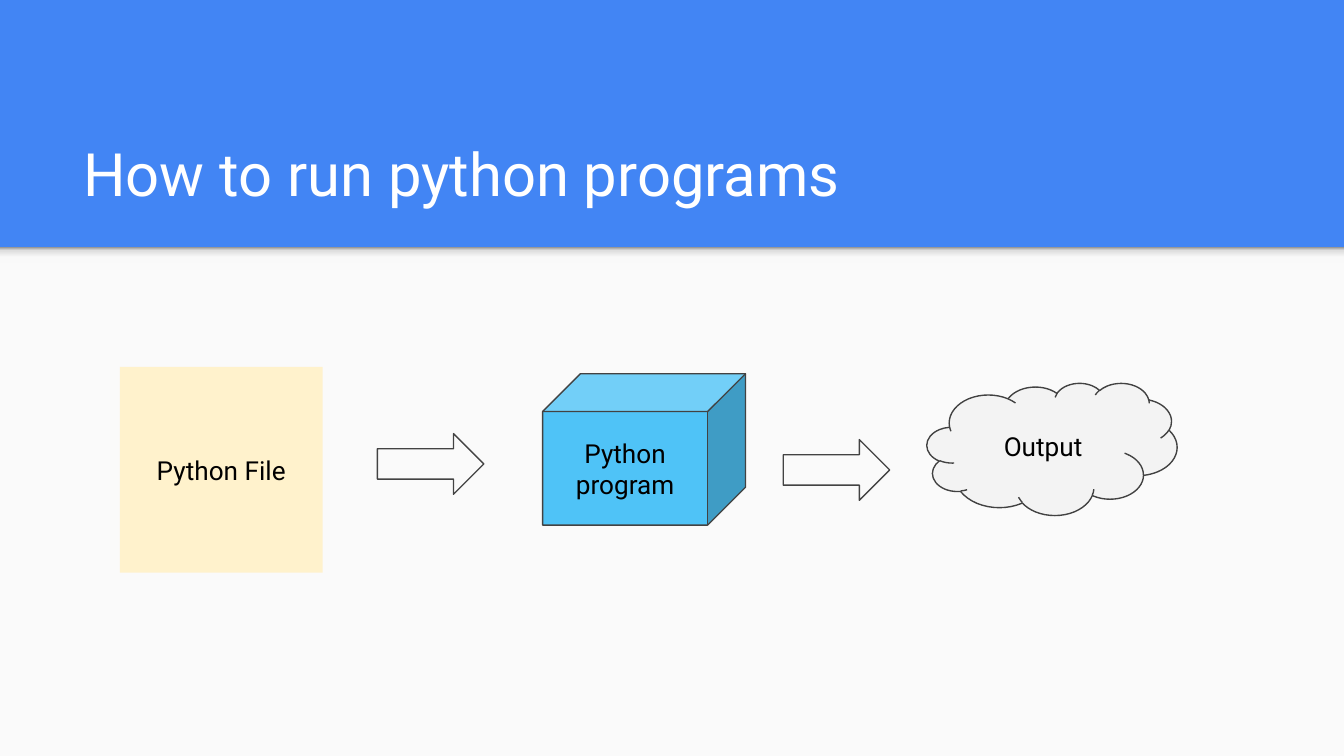
from copy import deepcopy

from pptx import Presentation
from pptx.dml.color import RGBColor
from pptx.enum.shapes import MSO_SHAPE as Shape
from pptx.enum.text import MSO_ANCHOR as Anchor, PP_ALIGN as Align
from pptx.oxml.ns import qn
from pptx.util import Pt


def color(value):
    return RGBColor.from_string(value)


def write(box, text, size=14, ink="000000", align=Align.CENTER, anchor=Anchor.MIDDLE):
    frame = box.text_frame
    frame.word_wrap = True
    frame.vertical_anchor = anchor
    frame.margin_left = frame.margin_right = Pt(7.2)
    frame.margin_top = frame.margin_bottom = Pt(7.2)
    para = frame.paragraphs[0]
    para.alignment = align
    span = para.add_run()
    span.text = text
    span.font.name = "Roboto"
    span.font.size = Pt(size)
    span.font.color.rgb = color(ink)


class Diagram:
    """Draws styled elements on the current page."""

    outline = "424242"

    def __init__(self, page):
        self.page = page

    def background(self, fill):
        self.page.background.fill.solid()
        self.page.background.fill.fore_color.rgb = color(fill)

    def shape(self, kind, left, top, width, height, fill=None, line=None, text=None):
        box = self.page.shapes.add_shape(kind, Pt(left), Pt(top), Pt(width), Pt(height))
        box.shadow.inherit = False
        if fill:
            box.fill.solid()
            box.fill.fore_color.rgb = color(fill)
        else:
            box.fill.background()
        if line:
            box.line.color.rgb = color(line)
            box.line.width = Pt(0.75)
        else:
            box.line.fill.background()
        if text:
            write(box, text)
        return box

    def fade(self, left, top, width, height, stops):
        band = self.shape(Shape.RECTANGLE, left, top, width, height)
        band.fill.gradient()
        band.fill.gradient_angle = 90
        stop_list = band._element.spPr.find(qn("a:gradFill")).find(qn("a:gsLst"))
        for _ in stops[len(stop_list):]:
            stop_list.append(deepcopy(stop_list[0]))
        for stop, (position, tint) in zip(band.fill.gradient_stops, stops):
            stop.position = position
            stop.color.rgb = color(tint)

    def title(self, text, left, top, width, height):
        box = self.page.shapes.add_textbox(Pt(left), Pt(top), Pt(width), Pt(height))
        write(box, text, size=32, ink="FFFFFF", align=Align.LEFT, anchor=Anchor.BOTTOM)

    def arrow(self, left, top):
        self.shape(Shape.RIGHT_ARROW, left, top, 57, 32.5, line="434343")


def main():
    deck = Presentation()
    deck.slide_width, deck.slide_height = Pt(720), Pt(405)
    diagram = Diagram(deck.slides.add_slide(deck.slide_layouts[6]))

    diagram.background("4285F4")
    diagram.shape(Shape.RECTANGLE, 0, 132.5, 720, 272.5, fill="FAFAFA")
    diagram.fade(0, 132.5, 720, 8.6,
                 [(0, "F9F9F9"), (0.36, "F9F9F9"), (0.8, "DEDEDE"), (1, "999999")])
    diagram.title("How to run python programs", 37.4, 58.3, 647.3, 60.5)

    diagram.shape(Shape.RECTANGLE, 64.2, 196.6, 108.7, 110.2,
                  fill="FFF2CC", text="Python File")
    diagram.shape(Shape.CUBE, 290.7, 200.2, 108.7, 81.1,
                  fill="4FC3F7", line=diagram.outline, text="Python program")
    diagram.shape(Shape.CLOUD, 496.6, 205.2, 134, 70.8,
                  fill="F3F3F3", line=diagram.outline, text="Output")
    for left, top in [(202.2, 232.3), (419.6, 235.5)]:
        diagram.arrow(left, top)

    deck.save("out.pptx")


if __name__ == "__main__":
    main()
